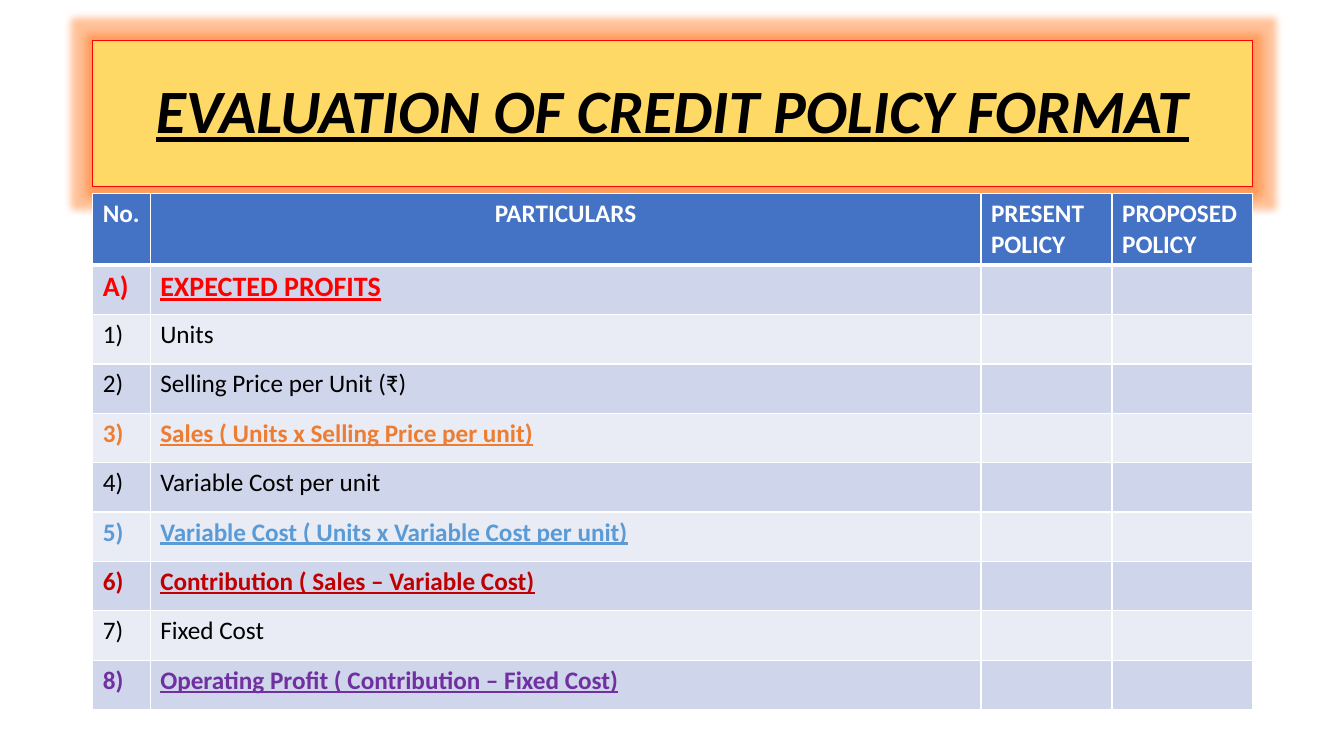
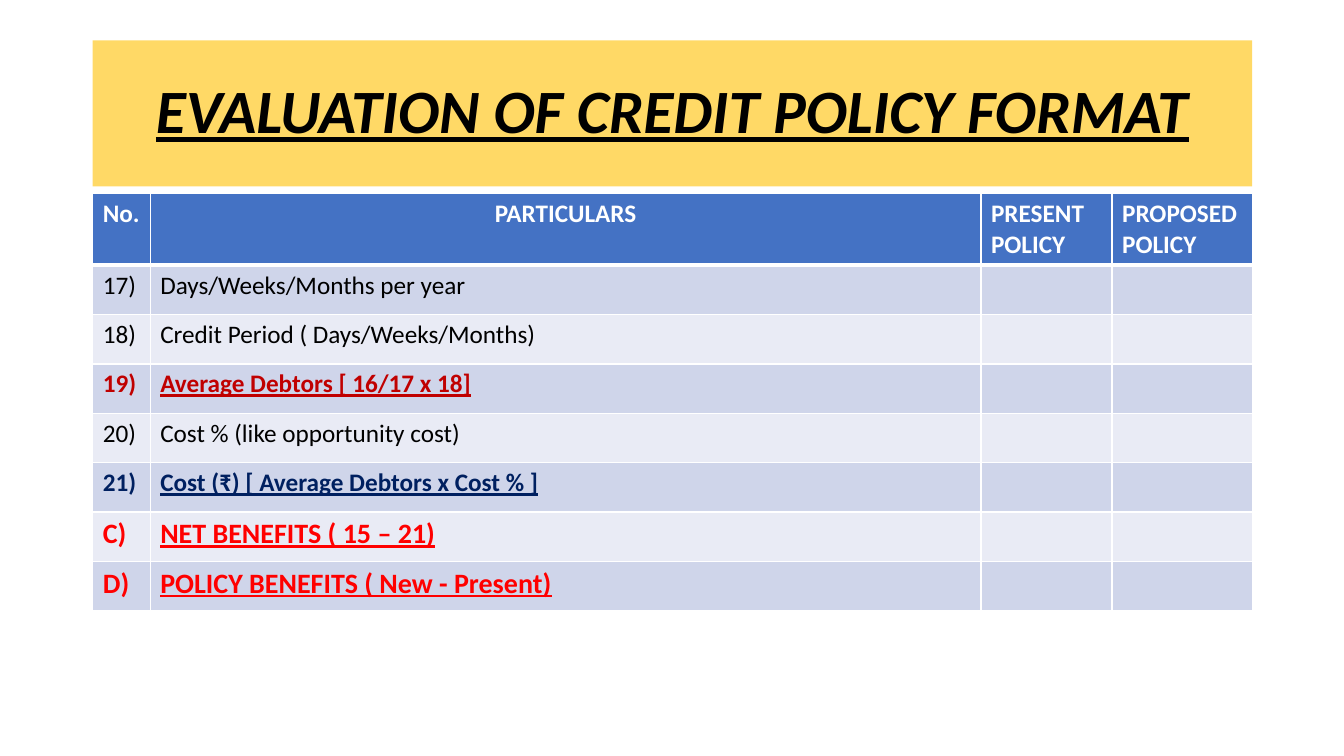
import pptx
import pptx.util
import pptx.dml.color
import pptx.enum.shapes
import pptx.enum.text
import pptx.oxml
import pptx.oxml.ns
import lxml.etree

Inches = pptx.util.Inches
RGB = pptx.dml.color.RGBColor.from_string
ALIGN = pptx.enum.text.PP_ALIGN
qn = pptx.oxml.ns.qn


class Theme:
    font = "Calibri"
    black, white, red = "000000", "FFFFFF", "FF0000"
    orange, blue, brick = "ED7D31", "5B9BD5", "C00000"
    purple, navy = "7030A0", "002060"
    gold, head, glow = "FFD966", "4472C4", "FF6600"
    bands = ("CFD5EA", "E9EBF5")
    title, large, body = 44, 20, 18


# Shared layout
LEFT, WIDTH = 0.92, 11.5
COLS = (0.57, 8.24, 1.3, 1.39)
HEAD_H, ROW_H = 0.71, 0.49
TITLE = "EVALUATION OF CREDIT POLICY FORMAT"
HEADS = ("No.", "PARTICULARS", "PRESENT POLICY", "PROPOSED POLICY")

# Slide content: number, wording, accent colour (None for a plain row), size
SLIDES = [
    {"framed": True, "rows": [
        ("A)", "EXPECTED PROFITS", Theme.red, Theme.large),
        ("1)", "Units", None, Theme.body),
        ("2)", "Selling Price per Unit (₹)", None, Theme.body),
        ("3)", "Sales ( Units x Selling Price per unit)", Theme.orange, Theme.body),
        ("4)", "Variable Cost per unit", None, Theme.body),
        ("5)", "Variable Cost ( Units x Variable Cost per unit)", Theme.blue, Theme.body),
        ("6)", "Contribution ( Sales – Variable Cost)", Theme.brick, Theme.body),
        ("7)", "Fixed Cost", None, Theme.body),
        ("8)", "Operating Profit ( Contribution – Fixed Cost)", Theme.purple, Theme.body),
    ]},
    {"framed": False, "rows": [
        ("17)", "Days/Weeks/Months per year", None, Theme.body),
        ("18)", "Credit Period ( Days/Weeks/Months)", None, Theme.body),
        ("19)", "Average Debtors [ 16/17 x 18]", Theme.brick, Theme.body),
        ("20)", "Cost % (like opportunity cost)", None, Theme.body),
        ("21)", "Cost (₹) [ Average Debtors x Cost % ]", Theme.navy, Theme.body),
        ("C)", "NET BENEFITS ( 15 – 21)", Theme.red, Theme.large),
        ("D)", "POLICY BENEFITS ( New - Present)", Theme.red, Theme.large),
    ]},
]


def write(frame, text, size, color, align=ALIGN.LEFT, **style):
    para = frame.paragraphs[0]
    para.alignment = align
    run = para.add_run()
    run.text = text
    look = {"name": Theme.font, "size": pptx.util.Pt(size), **style}
    for key, value in look.items():
        setattr(run.font, key, value)
    run.font.color.rgb = RGB(color)
    return para


def paint(cell, fill, top, bottom):
    props = cell._tc.get_or_add_tcPr()
    for side, width in {"L": 1, "R": 1, "T": top, "B": bottom}.items():
        line = lxml.etree.SubElement(props, qn("a:ln" + side),
                                     w=str(pptx.util.Pt(width)))
        solid = lxml.etree.SubElement(line, qn("a:solidFill"))
        lxml.etree.SubElement(solid, qn("a:srgbClr"), val=Theme.white)
    cell.fill.solid()
    cell.fill.fore_color.rgb = RGB(fill)


deck = pptx.Presentation()
deck.slide_width, deck.slide_height = Inches(13.33), Inches(7.5)

for page in SLIDES:
    slide = deck.slides.add_slide(deck.slide_layouts[6])

    # Title band
    band = slide.shapes.add_shape(
        pptx.enum.shapes.MSO_SHAPE.RECTANGLE,
        Inches(LEFT), Inches(0.4), Inches(WIDTH), Inches(1.45))
    band.shadow.inherit = False
    band.fill.solid()
    band.fill.fore_color.rgb = RGB(Theme.gold)
    band.text_frame.word_wrap = True
    band.text_frame.vertical_anchor = pptx.enum.text.MSO_ANCHOR.MIDDLE
    para = write(band.text_frame, TITLE, Theme.title, Theme.black, ALIGN.CENTER,
                 bold=True, italic=True, underline=True)
    para.line_spacing = 0.9

    # Red outline and soft glow, or no outline
    if page["framed"]:
        band.line.color.rgb = RGB(Theme.red)
        band.line.width = pptx.util.Pt(0.75)
        effects = band._element.spPr.find(qn("a:effectLst"))
        glow = lxml.etree.SubElement(effects, qn("a:glow"),
                                     rad=str(pptx.util.Pt(11)))
        tint = lxml.etree.SubElement(glow, qn("a:srgbClr"), val=Theme.glow)
        lxml.etree.SubElement(tint, qn("a:alpha"), val="40000")
    else:
        band.line.fill.background()

    # Table grid
    rows = page["rows"]
    table = slide.shapes.add_table(
        len(rows) + 1, len(COLS), Inches(LEFT), Inches(1.92), Inches(WIDTH),
        Inches(HEAD_H + ROW_H * len(rows))).table
    for col, width in zip(table.columns, COLS):
        col.width = Inches(width)
    for n, row in enumerate(table.rows):
        row.height = Inches(ROW_H if n else HEAD_H)

    # Header row
    for n, text in enumerate(HEADS):
        cell = table.cell(0, n)
        paint(cell, Theme.head, 1, 3)
        write(cell.text_frame, text, Theme.body, Theme.white,
              ALIGN.CENTER if n == 1 else ALIGN.LEFT, bold=True)

    # Body rows
    for n, (mark, text, accent, size) in enumerate(rows):
        cells = table.rows[n + 1].cells
        for cell in cells:
            paint(cell, Theme.bands[n % 2], 1 if n else 3, 1)
        strong = accent is not None
        color = accent or Theme.black
        write(cells[0].text_frame, mark, size, color, bold=strong)
        write(cells[1].text_frame, text, size, color, bold=strong, underline=strong)

deck.save("out.pptx")
